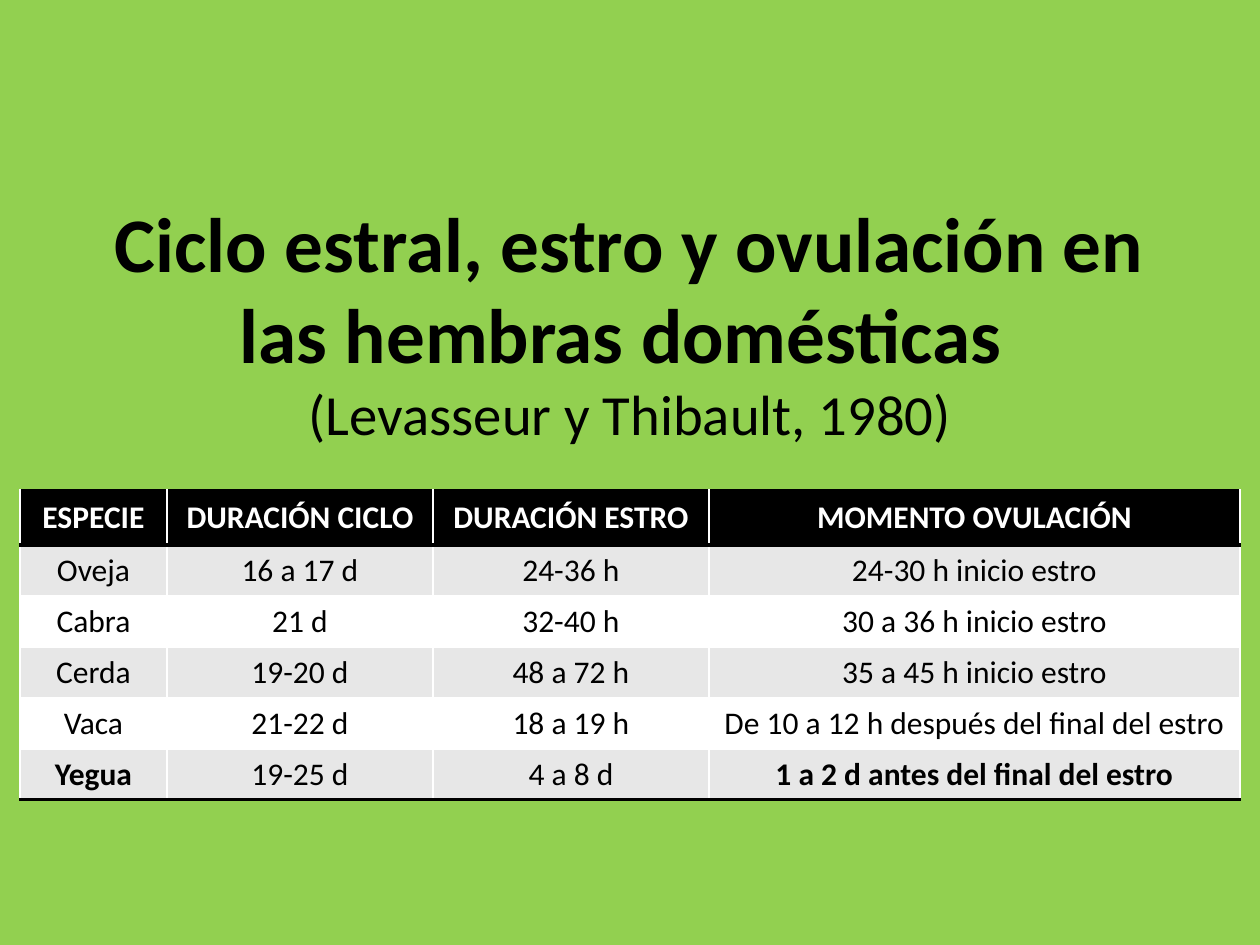
from lxml import etree
from pptx import Presentation
from pptx.dml.color import RGBColor
from pptx.enum.text import MSO_ANCHOR, PP_ALIGN
from pptx.oxml.ns import qn
from pptx.util import Emu, Pt

PX = 914400 // 126
CENTER = PP_ALIGN.CENTER
MIDDLE = MSO_ANCHOR.MIDDLE
COLORS = {"background": "92D050", "black": "000000", "white": "FFFFFF", "band": "E7E7E7"}

COLUMN_WIDTHS = [147, 266, 276, 531]
HEADER_HEIGHT, ROW_HEIGHT = 54, 51
ROWS = [
    ["ESPECIE", "DURACIÓN CICLO", "DURACIÓN ESTRO", "MOMENTO OVULACIÓN"],
    ["Oveja", "16 a 17 d", "24-36 h", "24-30 h inicio estro"],
    ["Cabra", "21 d", "32-40 h", "30 a 36 h inicio estro"],
    ["Cerda", "19-20 d", "48 a 72 h", "35 a 45 h inicio estro"],
    ["Vaca", "21-22 d", "18 a 19 h", "De 10 a 12 h después del final del estro"],
    ["Yegua", "19-25 d", "4 a 8 d", "1 a 2 d antes del final del estro"],
]
BOLD_CELLS = {"Yegua", "1 a 2 d antes del final del estro"}


def px(length):
    return Emu(length * PX)


def rgb(name):
    return RGBColor.from_string(COLORS[name])


class SlideBuilder:
    font = "Calibri"

    def __init__(self, presentation):
        self.slide = presentation.slides.add_slide(presentation.slide_layouts[6])
        fill = self.slide.background.fill
        fill.solid()
        fill.fore_color.rgb = rgb("background")

    def run(self, paragraph, text, size, color="black", bold=False):
        run = paragraph.add_run()
        run.text = text
        run.font.name = self.font
        run.font.size = Pt(size)
        run.font.bold = bold
        run.font.color.rgb = rgb(color)

    def title(self, left, top, width, height, heading, citation):
        frame = self.slide.shapes.add_textbox(px(left), px(top), px(width), px(height)).text_frame
        frame.word_wrap = True
        frame.vertical_anchor = MIDDLE
        paragraph = frame.paragraphs[0]
        paragraph.alignment = CENTER
        paragraph.line_spacing = 0.98
        self.run(paragraph, heading, 44.1, bold=True)
        paragraph.add_line_break()
        self.run(paragraph, citation, 32.4)

    def border(self, cell, side):
        """Draw a black 2 pt edge; side is lnT or lnB."""
        line = etree.Element(qn(f"a:{side}"), w=str(Pt(2)))
        fill = etree.SubElement(line, qn("a:solidFill"))
        etree.SubElement(fill, qn("a:srgbClr"), val=COLORS["black"])
        properties = cell._tc.get_or_add_tcPr()
        position = len(properties.findall(qn("a:lnT")))
        properties.insert(position, line)

    def cell(self, cell, text, fill, color, bold):
        cell.fill.solid()
        cell.fill.fore_color.rgb = rgb(fill)
        paragraph = cell.text_frame.paragraphs[0]
        paragraph.alignment = CENTER
        self.run(paragraph, text, 18, color, bold)

    def table(self, left, top, rows, widths):
        height = HEADER_HEIGHT + ROW_HEIGHT * (len(rows) - 1)
        table = self.slide.shapes.add_table(
            len(rows), len(widths), px(left), px(top), px(sum(widths)), px(height)
        ).table
        for column, width in zip(table.columns, widths):
            column.width = px(width)
        for row_index, texts in enumerate(rows):
            header = row_index == 0
            table.rows[row_index].height = px(HEADER_HEIGHT if header else ROW_HEIGHT)
            fill = "black" if header else "band" if row_index % 2 else "white"
            color = "white" if header else "black"
            for column_index, text in enumerate(texts):
                cell = table.cell(row_index, column_index)
                self.cell(cell, text, fill, color, header or text in BOLD_CELLS)
                cell.vertical_anchor = MIDDLE
                if header:
                    self.border(cell, "lnT")
                if header or row_index == len(rows) - 1:
                    self.border(cell, "lnB")


def main():
    presentation = Presentation()
    presentation.slide_width = px(1260)
    presentation.slide_height = px(945)
    builder = SlideBuilder(presentation)
    builder.title(63, 246, 1134, 157,
                  "Ciclo estral, estro y ovulación en las hembras domésticas ",
                  "(Levasseur y Thibault, 1980)")
    builder.table(20, 491, ROWS, COLUMN_WIDTHS)
    presentation.save("out.pptx")


if __name__ == "__main__":
    main()
